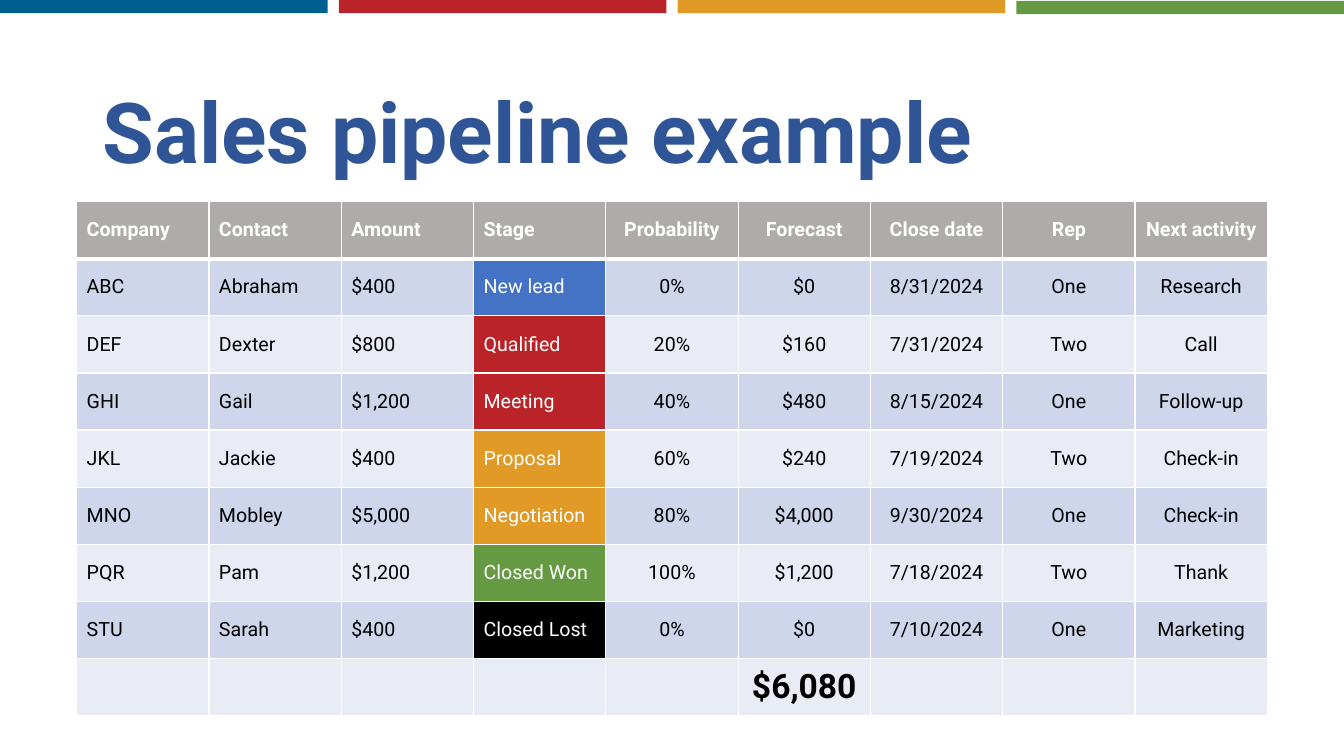
from lxml import etree
from pptx import Presentation
from pptx import util as u
from pptx.dml.color import RGBColor
from pptx.enum import shapes, text
from pptx.oxml.ns import qn

FONT = "Roboto"
WHITE, BLACK = "FFFFFF", "000000"
BLUE, RED, ORANGE, GREEN = "005F91", "BA2428", "E19A26", "659942"
HEADER_FILL, BANDS = "AFABAB", ("CFD5EA", "E9EBF5")
STAGE_FILLS = {
    "New lead": "4472C4", "Qualified": RED, "Meeting": RED,
    "Proposal": ORANGE, "Negotiation": ORANGE,
    "Closed Won": GREEN, "Closed Lost": BLACK,
}
FIRST_CENTERED = 4  # columns from Probability on are centred
HEADERS = ["Company", "Contact", "Amount", "Stage", "Probability",
           "Forecast", "Close date", "Rep", "Next activity"]
DEALS = [
    ["ABC", "Abraham", "$400", "New lead", "0%", "$0", "8/31/2024", "One", "Research"],
    ["DEF", "Dexter", "$800", "Qualified", "20%", "$160", "7/31/2024", "Two", "Call"],
    ["GHI", "Gail", "$1,200", "Meeting", "40%", "$480", "8/15/2024", "One", "Follow-up"],
    ["JKL", "Jackie", "$400", "Proposal", "60%", "$240", "7/19/2024", "Two", "Check-in"],
    ["MNO", "Mobley", "$5,000", "Negotiation", "80%", "$4,000", "9/30/2024", "One", "Check-in"],
    ["PQR", "Pam", "$1,200", "Closed Won", "100%", "$1,200", "7/18/2024", "Two", "Thank"],
    ["STU", "Sarah", "$400", "Closed Lost", "0%", "$0", "7/10/2024", "One", "Marketing"],
]
TOTALS = ["$6,080" if name == "Forecast" else "" for name in HEADERS]


def rgb(value):
    return RGBColor.from_string(value)


def set_fill(target, color):
    target.fill.solid()
    target.fill.fore_color.rgb = rgb(color)


def add_run(p, content, color, **fmt):
    r = p.add_run()
    r.text = content
    r.font.color.rgb = rgb(color)
    for name, value in {"name": FONT, **fmt}.items():
        setattr(r.font, name, value)


def add_bar(s, left, top, color):
    sp = s.shapes.add_shape(shapes.MSO_SHAPE.RECTANGLE, u.Inches(left),
                            u.Inches(top), u.Inches(3.25), u.Inches(0.13))
    sp.shadow.inherit = False
    set_fill(sp, color)
    sp.line.fill.background()


def add_title(s, content):
    sp = s.shapes.add_textbox(u.Inches(0.92), u.Inches(0.4),
                              u.Inches(11.5), u.Inches(1.45))
    tf = sp.text_frame
    tf.word_wrap = True
    tf.vertical_anchor = text.MSO_ANCHOR.BOTTOM
    p = tf.paragraphs[0]
    p.line_spacing = 0.9
    add_run(p, content, "2F5597", size=u.Pt(60), bold=True)


def set_borders(cell, widths):
    tc_pr = cell._tc.get_or_add_tcPr()
    for side, width in widths.items():
        ln = etree.SubElement(tc_pr, qn("a:ln" + side), w=str(u.Pt(width)))
        fill = etree.SubElement(ln, qn("a:solidFill"))
        etree.SubElement(fill, qn("a:srgbClr"), val=WHITE)


def cell_style(row, col, content, last_row):
    """Return the fill, the text colour and the font format of a cell."""
    if row == 0:
        return HEADER_FILL, WHITE, {"size": u.Pt(14), "bold": True}
    if row == last_row:
        return BANDS[(row - 1) % 2], BLACK, {"size": u.Pt(24), "bold": True}
    plain = {"size": u.Pt(14), "bold": False}
    if HEADERS[col] == "Stage":
        return STAGE_FILLS[content], WHITE, plain
    return BANDS[(row - 1) % 2], BLACK, plain


def add_pipeline_table(s, rows):
    frame = s.shapes.add_table(len(rows), len(HEADERS), u.Inches(0.76),
                               u.Inches(2), u.Inches(11.81), u.Inches(5.1))
    table = frame.table
    last_row = len(rows) - 1
    for i, values in enumerate(rows):
        for j, content in enumerate(values):
            cell = table.cell(i, j)
            fill, color, fmt = cell_style(i, j, content, last_row)
            set_borders(cell, {"L": 1, "R": 1, "T": 3 if i == 1 else 1,
                               "B": 3 if i == 0 else 1})
            set_fill(cell, fill)
            cell.vertical_anchor = text.MSO_ANCHOR.MIDDLE
            if content:
                p = cell.text_frame.paragraphs[0]
                if j >= FIRST_CENTERED:
                    p.alignment = text.PP_ALIGN.CENTER
                add_run(p, content, color, **fmt)


def main():
    prs = Presentation()
    prs.slide_width, prs.slide_height = u.Inches(13.33), u.Inches(7.5)
    s = prs.slides.add_slide(prs.slide_layouts[6])

    # Colour bars along the top edge; the last sits slightly lower
    for i, color in enumerate((BLUE, RED, ORANGE, GREEN)):
        add_bar(s, 3.36 * i, 0.01 if color == GREEN else 0, color)

    # Title and pipeline table
    add_title(s, "Sales pipeline example")
    add_pipeline_table(s, [HEADERS, *DEALS, TOTALS])

    prs.save("out.pptx")


if __name__ == "__main__":
    main()
